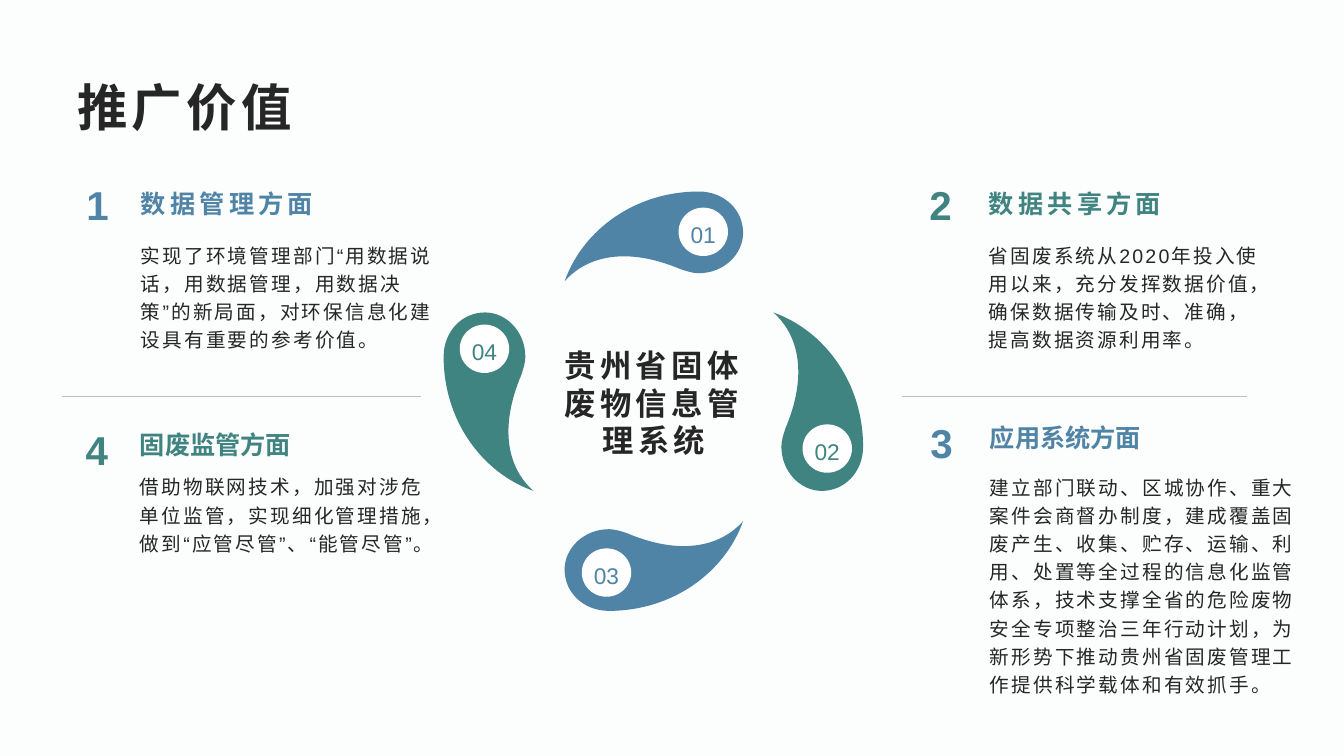
from lxml import etree
from pptx import Presentation
from pptx import util as u
from pptx.dml.color import RGBColor
from pptx.enum import shapes, text
from pptx.oxml import ns

PX = 9144  # one hundredth of an inch
BLUE = RGBColor(0x4F, 0x84, 0xA6)
TEAL = RGBColor(0x40, 0x84, 0x81)
DARK = RGBColor(0x26, 0x26, 0x26)
GREY = RGBColor(0xBF, 0xBF, 0xBF)
WHITE = RGBColor(0xFF, 0xFF, 0xFF)
BACKGROUND = RGBColor(0xFC, 0xFD, 0xFD)
TOP, MIDDLE, BOTTOM = text.MSO_ANCHOR.TOP, text.MSO_ANCHOR.MIDDLE, text.MSO_ANCHOR.BOTTOM
LEFT, CENTER = text.PP_ALIGN.LEFT, text.PP_ALIGN.CENTER


def write(shape, words, size, color, bold=False, spacing=0, line=1.0,
          anchor=TOP, align=LEFT, insets=(10, 5, 10, 5)):
    """Fill a shape with one formatted paragraph; spacing is in points."""
    frame = shape.text_frame
    frame.word_wrap = True
    frame.vertical_anchor = anchor
    (frame.margin_left, frame.margin_top,
     frame.margin_right, frame.margin_bottom) = [inset * PX for inset in insets]
    frame.text = words
    paragraph = frame.paragraphs[0]
    paragraph.alignment = align
    paragraph.line_spacing = line
    run = paragraph.runs[0]
    run.font.name = "Arial"
    run.font.size = u.Pt(size)
    run.font.bold = bold
    run.font.color.rgb = color
    properties = run._r.get_or_add_rPr()
    properties.set("lang", "zh-CN")
    properties.set("spc", str(int(spacing * 100)))
    etree.SubElement(properties, ns.qn("a:ea")).set("typeface", "Arial")


def add_text(left, top, width, height, words, size, color, **style):
    box = slide.shapes.add_textbox(left * PX, top * PX, width * PX, height * PX)
    write(box, words, size, color, **style)


presentation = Presentation()
presentation.slide_width = 1333 * PX
presentation.slide_height = 750 * PX
slide = presentation.slides.add_slide(presentation.slide_layouts[6])
slide.background.fill.solid()
slide.background.fill.fore_color.rgb = BACKGROUND

add_text(67, 67, 1200, 77, "推广价值", 36, DARK, bold=True, spacing=3, anchor=MIDDLE)

# Ring of petals: three points per Bézier curve after the start
PETAL_START = (62, 12)
PETAL_CURVES = [
    (56, 10), (50, 8), (44, 8),
    (19, 8), (0, 27), (0, 48),
    (0, 71), (19, 89), (44, 89),
    (107, 89), (159, 51), (177, 0),
    (154, 26), (114, 34), (62, 12),
]
# label, petal left, top, rotation, disc left, top, colour
petals = [
    ("01", 560, 190, 180, 673, 206, BLUE),
    ("02", 723, 354, 270, 796, 421, TEAL),
    ("03", 560, 517, 0, 577, 544, BLUE),
    ("04", 396, 354, 90, 456, 322, TEAL),
]
for label, left, top, rotation, disc_left, disc_top, color in petals:
    builder = slide.shapes.build_freeform(*PETAL_START, scale=PX)
    builder.add_line_segments(PETAL_CURVES, close=True)
    petal = builder.convert_to_shape(left * PX, top * PX)
    segments = list(petal._element.iter(ns.qn("a:lnTo")))
    for first in range(0, len(PETAL_CURVES), 3):
        curve = etree.Element(ns.qn("a:cubicBezTo"))
        segments[first].addprevious(curve)
        for segment in segments[first:first + 3]:
            curve.append(segment[0])
            segment.getparent().remove(segment)
    petal.rotation = rotation
    disc = slide.shapes.add_shape(shapes.MSO_SHAPE.OVAL, disc_left * PX, disc_top * PX,
                                  49 * PX, 48 * PX)
    for shape, fill in ((petal, color), (disc, WHITE)):
        shape.shadow.inherit = False
        shape.fill.solid()
        shape.fill.fore_color.rgb = fill
        shape.line.fill.background()
    write(disc, label, 16.2, color, line=1.2, anchor=MIDDLE, align=CENTER, insets=(0, 0, 0, 0))

add_text(549, 320, 199, 159, "贵州省固体废物信息管理系统", 22.4, DARK,
         bold=True, spacing=3, anchor=MIDDLE, align=CENTER)

# number, (left, top), heading, (left, top, height, letter spacing, line spacing), colour,
# body, (top, width, height)
aspects = [
    ("1", (76, 174), "数据管理方面", (130, 174, 43, 3, 1.2), BLUE,
     "实现了环境管理部门“用数据说话，用数据管理，用数据决策”的新局面，"
     "对环保信息化建设具有重要的参考价值。", (237, 310, 144)),
    ("2", (912, 174), "数据共享方面", (971, 174, 43, 3, 1.2), TEAL,
     "省固废系统从2020年投入使用以来，充分发挥数据价值，确保数据传输及时、准确，"
     "提高数据资源利用率。", (237, 290, 144)),
    ("3", (913, 410), "应用系统方面", (972, 410, 39, 0, 1.0), BLUE,
     "建立部门联动、区城协作、重大案件会商督办制度，建成覆盖固废产生、收集、贮存、运输、"
     "利用、处置等全过程的信息化监管体系，技术支撑全省的危险废物安全专项整治三年行动计划，"
     "为新形势下推动贵州省固废管理工作提供科学载体和有效抓手。", (467, 342, 232)),
    ("4", (75, 417), "固废监管方面", (129, 410, 46, 0, 1.3), TEAL,
     "借助物联网技术，加强对涉危单位监管，实现细化管理措施，做到“应管尽管”、“能管尽管”。",
     (467, 304, 214)),
]
for number, corner, heading, heading_layout, color, body, body_layout in aspects:
    left, top, height, spacing, line = heading_layout
    body_top, body_width, body_height = body_layout
    add_text(*corner, 44, 63, number, 28.8, color, bold=True)
    add_text(left, top, 290, height, heading, 18, color, bold=True, spacing=spacing,
             line=line, anchor=BOTTOM, insets=(10, 5, 10, 0))
    add_text(left, body_top, body_width, body_height, body, 14, DARK, spacing=1.5,
             line=1.2, insets=(10, 0, 10, 5))

for start, end in ((62, 418), (895, 1237)):
    divider = slide.shapes.add_connector(shapes.MSO_CONNECTOR.STRAIGHT,
                                         start * PX, 393 * PX, end * PX, 393 * PX)
    divider.line.color.rgb = GREY
    divider.line.width = u.Pt(0.25)
    etree.SubElement(divider._element.spPr, ns.qn("a:effectLst"))

presentation.save("out.pptx")
